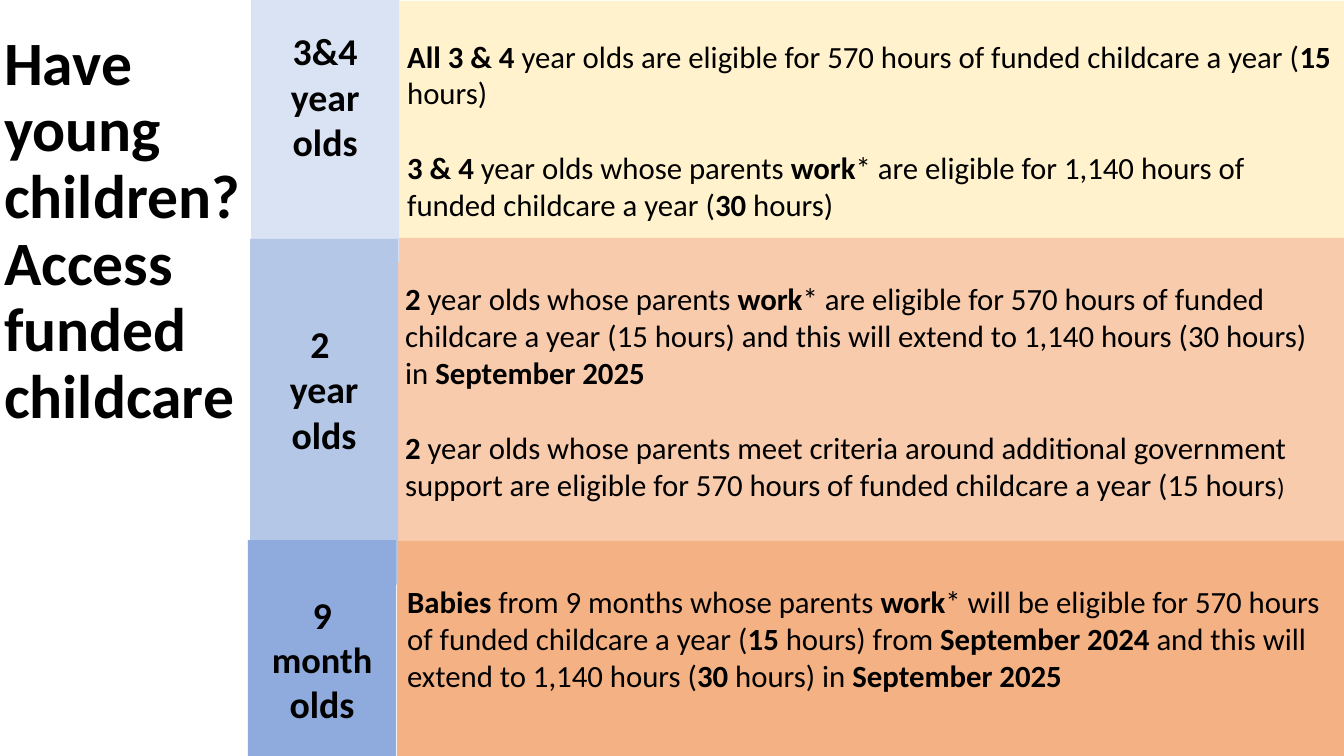
from dataclasses import dataclass

from pptx import Presentation
from pptx.dml.color import RGBColor
from pptx.enum.shapes import MSO_SHAPE
from pptx.enum.text import MSO_ANCHOR, MSO_AUTO_SIZE, PP_ALIGN
from pptx.util import Inches, Pt

BLACK = RGBColor(0x00, 0x00, 0x00)
CREAM = RGBColor(0xFF, 0xF2, 0xCC)
PEACH = RGBColor(0xF8, 0xCB, 0xAD)
ORANGE = RGBColor(0xF4, 0xB1, 0x83)
PALE_BLUE = RGBColor(0xDA, 0xE3, 0xF3)
LIGHT_BLUE = RGBColor(0xB4, 0xC7, 0xE7)
MID_BLUE = RGBColor(0x8F, 0xAA, 0xDC)

FONT = "Calibri"
BODY_SIZE = 22
LABEL_SIZE = 27
PARAGRAPH_GAP = Pt(27)


@dataclass
class Span:
    text: str
    size: float = BODY_SIZE
    bold: bool = False


@dataclass
class Panel:
    left: float
    top: float
    width: float
    height: float
    fill: RGBColor
    inset: float  # space above the first line
    paragraphs: list[list[Span]]
    align: PP_ALIGN = PP_ALIGN.LEFT
    gap: int = PARAGRAPH_GAP


def bold(text: str) -> Span:
    return Span(text, bold=True)


def label(text: str, size: float = LABEL_SIZE) -> list[Span]:
    return [Span(text, size, True)]


def add_span(para, span: Span) -> None:
    run = para.add_run()
    run.text = span.text
    formats = {"name": FONT, "size": Pt(span.size), "bold": span.bold}
    for name, value in formats.items():
        setattr(run.font, name, value)
    run.font.color.rgb = BLACK


def format_frame(frame, inset: float) -> None:
    formats = {
        "word_wrap": True,
        "auto_size": MSO_AUTO_SIZE.NONE,
        "vertical_anchor": MSO_ANCHOR.TOP,
        "margin_top": Inches(inset),
    }
    for name, value in formats.items():
        setattr(frame, name, value)


def add_panel(page, panel: Panel) -> None:
    box = page.shapes.add_shape(
        MSO_SHAPE.RECTANGLE, Inches(panel.left), Inches(panel.top),
        Inches(panel.width), Inches(panel.height))
    box.shadow.inherit = False
    box.fill.solid()
    box.fill.fore_color.rgb = panel.fill
    box.line.fill.background()
    frame = box.text_frame
    format_frame(frame, panel.inset)
    for index, spans in enumerate(panel.paragraphs):
        para = frame.add_paragraph() if index else frame.paragraphs[0]
        para.alignment = panel.align
        if index:
            para.space_before = panel.gap
        for span in spans:
            add_span(para, span)


def add_title(page, text: str) -> None:
    title = page.shapes.title
    bounds = {"left": -0.06, "top": 0.27, "width": 2.64, "height": 7.1}
    for name, value in bounds.items():
        setattr(title, name, Inches(value))
    format_frame(title.text_frame, 0.05)
    para = title.text_frame.paragraphs[0]
    para.alignment = PP_ALIGN.LEFT
    para.line_spacing = 0.9
    for index, line in enumerate(text.split("\n")):
        if index:
            para.add_line_break()
        add_span(para, Span(line, 44, True))


# Eligibility rules for each age group
RULES = [
    Panel(3.94, 0.01, 9.4, 2.56, CREAM, 0.36, [
        [bold("All 3 & 4 "),
         Span("year olds are eligible for 570 hours of funded childcare a year ("),
         bold("15"), Span(" hours)")],
        [bold("3 & 4 "), Span("year olds whose parents "), bold("work"),
         Span("* are eligible for 1,140 hours of funded childcare a year ("),
         bold("30"), Span(" hours)")],
    ]),
    Panel(3.92, 2.36, 9.41, 3, PEACH, 0.42, [
        [bold("2"), Span(" year olds whose parents "), bold("work"),
         Span("* are eligible for 570 hours of funded childcare a year (15 hours) "
              "and this will extend to 1,140 hours (30 hours) in "),
         bold("September 2025")],
        [bold("2"),
         Span(" year olds whose parents meet criteria around additional government "
              "support are eligible for 570 hours of funded childcare a year (15 hours"),
         Span(")", 18)],
    ]),
    Panel(3.94, 5.36, 9.4, 2.19, ORANGE, 0.42, [
        [bold("Babies"), Span(" from 9 months whose parents "), bold("work"),
         Span("* will be eligible for 570 hours of funded childcare a year ("),
         bold("15"), Span(" hours) from "), bold("September 2024 "),
         Span("and this will extend to 1,140 hours ("), bold("30"),
         Span(" hours) in "), bold("September 2025")],
    ]),
]

# Age group labels
AGES = [
    Panel(2.49, -0.23, 1.47, 2.83, PALE_BLUE, 0.51,
          [label("3&4 year olds")], PP_ALIGN.CENTER, Pt(0)),
    Panel(2.48, 2.37, 1.47, 3.43, LIGHT_BLUE, 0.81,
          [label("2 "), label("year olds")], PP_ALIGN.CENTER, Pt(0)),
    Panel(2.46, 5.36, 1.47, 2.36, MID_BLUE, 0.51,
          [label("9"), label("month", 26), label("olds")], PP_ALIGN.CENTER, Pt(0)),
]


def main() -> None:
    deck = Presentation()
    deck.slide_width = Inches(13.33)
    deck.slide_height = Inches(7.5)
    page = deck.slides.add_slide(deck.slide_layouts[5])
    add_title(page, "Have young children?\nAccess funded childcare")
    for panel in RULES + AGES:
        add_panel(page, panel)
    deck.save("out.pptx")


if __name__ == "__main__":
    main()
